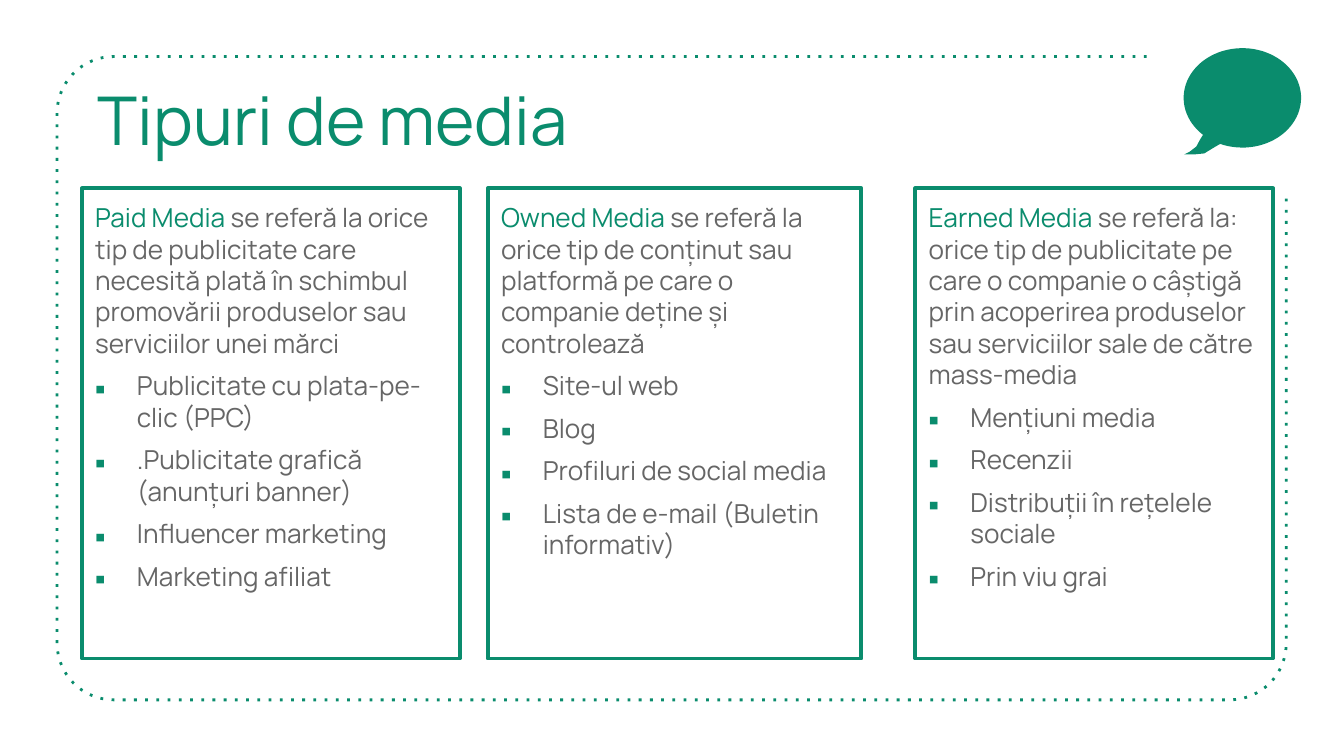
import math
from lxml import etree
from pptx import Presentation
from pptx import util as u
from pptx.dml.color import RGBColor
from pptx.enum import shapes, text
from pptx.oxml import ns

TITLE = "Tipuri de media"
CARDS = [
    {
        "left": 1.55, "width": 7.14, "term": "Paid Media ",
        "meaning": "se referă la orice tip de publicitate care necesită plată "
                   "în schimbul promovării produselor sau serviciilor unei mărci",
        "examples": ["Publicitate cu plata-pe-clic (PPC)",
                     ".Publicitate grafică (anunțuri banner)",
                     "Influencer marketing", "Marketing afiliat"],
    },
    {
        "left": 9.22, "width": 7.06, "term": "Owned Media ",
        "meaning": "se referă la orice tip de conținut sau platformă "
                   "pe care o companie deține și controlează",
        "examples": ["Site-ul web", "Blog", "Profiluri de social media",
                     "Lista de e-mail (Buletin informativ)"],
    },
    {
        "left": 17.3, "width": 6.76, "term": "Earned Media ",
        "meaning": "se referă la: orice tip de publicitate pe care o companie o câștigă "
                   "prin acoperirea produselor sau serviciilor sale de către mass-media",
        "examples": ["Mențiuni media", "Recenzii",
                     "Distribuții în rețelele sociale", "Prin viu grai"],
    },
]
THEME = {
    "font": "Manrope",
    "green": RGBColor.from_string("0A8C6D"),
    "grey": RGBColor.from_string("666666"),
    "white": RGBColor.from_string("FFFFFF"),
    "title": u.Pt(36),
    "body": u.Pt(14),
}
CARD_TOP, CARD_HEIGHT = 3.56, 8.89
FRAME = {"left": 1.08, "top": 1.07, "right": 24.31, "bottom": 13.23, "radius": 1.07}
FRAME_START, FRAME_END = (21.67, 1.07), (24.31, 3.71)
BUBBLE = {"cx": 23.48, "cy": 1.85, "rx": 1.11, "ry": 0.94}
BUBBLE_TAIL = [(23.06, 2.72), (22.94, 2.79), (22.76, 2.9), (22.56, 2.92),
               (22.38, 2.92), (22.48, 2.87), (22.61, 2.77), (22.68, 2.64)]
INDENT = u.Cm(0.79)
FRAME_FORMAT = {
    "word_wrap": True,
    "auto_size": text.MSO_AUTO_SIZE.NONE,
    "vertical_anchor": text.MSO_ANCHOR.TOP,
    "margin_left": u.Cm(0.25), "margin_right": u.Cm(0.25),
    "margin_top": u.Cm(0.25), "margin_bottom": u.Cm(0.25),
}


def arc(cx, cy, rx, ry, start, end, steps):
    angles = [math.radians(start + (end - start) * i / steps) for i in range(steps + 1)]
    return [(cx + rx * math.cos(a), cy + ry * math.sin(a)) for a in angles]


def draw_outline(slide, points, close):
    scaled = [(u.Cm(x), u.Cm(y)) for x, y in points]
    builder = slide.shapes.build_freeform(*scaled[0], scale=1.0)
    builder.add_line_segments(scaled[1:], close=close)
    outline = builder.convert_to_shape()
    outline.shadow.inherit = False
    return outline


def set_line(shape, points):
    shape.line.color.rgb = THEME["green"]
    shape.line.width = u.Pt(points)


def set_fill(shape, color):
    shape.fill.solid()
    shape.fill.fore_color.rgb = THEME[color]


def prepare_text(shape):
    for name, value in FRAME_FORMAT.items():
        setattr(shape.text_frame, name, value)
    return shape.text_frame


def add_run(paragraph, words, color, size="body"):
    run = paragraph.add_run()
    run.text = words
    for name, value in {"name": THEME["font"], "size": THEME[size]}.items():
        setattr(run.font, name, value)
    run.font.color.rgb = THEME[color]


def add_bullet(paragraph):
    props = paragraph._p.get_or_add_pPr()
    props.set("marL", str(INDENT))
    props.set("indent", str(-INDENT))
    color = etree.SubElement(props, ns.qn("a:buClr"))
    etree.SubElement(color, ns.qn("a:srgbClr"), val=str(THEME["green"]))
    etree.SubElement(props, ns.qn("a:buFont"), typeface="Noto Sans Symbols")
    etree.SubElement(props, ns.qn("a:buChar"), char="▪")


def draw_frame(slide):
    left, top, right, bottom, r = FRAME.values()
    corners = [(left + r, top + r, 270, 180), (left + r, bottom - r, 180, 90),
               (right - r, bottom - r, 90, 0)]
    points = [FRAME_START]
    for cx, cy, start, end in corners:
        points += arc(cx, cy, r, r, start, end, 16)
    frame = draw_outline(slide, points + [FRAME_END], False)
    frame.fill.background()
    set_line(frame, 1.5)
    etree.SubElement(frame.line._get_or_add_ln(), ns.qn("a:prstDash"), val="dot")


def draw_bubble(slide):
    body = arc(*BUBBLE.values(), 132, 472, 80)
    bubble = draw_outline(slide, body + BUBBLE_TAIL, True)
    set_fill(bubble, "green")
    bubble.line.fill.background()


def draw_title(slide):
    title = slide.shapes.add_textbox(u.Cm(1.6), u.Cm(1.24), u.Cm(19.08), u.Cm(1.6))
    add_run(prepare_text(title).paragraphs[0], TITLE, "green", "title")


def draw_card(slide, content):
    card = slide.shapes.add_shape(
        shapes.MSO_SHAPE.RECTANGLE, u.Cm(content["left"]), u.Cm(CARD_TOP),
        u.Cm(content["width"]), u.Cm(CARD_HEIGHT))
    card.shadow.inherit = False
    set_fill(card, "white")
    set_line(card, 2)
    body = prepare_text(card)
    definition = body.paragraphs[0]
    add_run(definition, content["term"], "green")
    add_run(definition, content["meaning"], "grey")
    for example in content["examples"]:
        item = body.add_paragraph()
        add_run(item, example, "grey")
    for paragraph in body.paragraphs:
        paragraph.alignment = text.PP_ALIGN.LEFT
        paragraph.space_before = u.Pt(6)
    for item in body.paragraphs[1:]:
        add_bullet(item)


def main():
    deck = Presentation()
    deck.slide_width, deck.slide_height = u.Cm(25.4), u.Cm(14.29)
    slide = deck.slides.add_slide(deck.slide_layouts[6])
    draw_frame(slide)
    draw_title(slide)
    draw_bubble(slide)
    for content in CARDS:
        draw_card(slide, content)
    deck.save("out.pptx")


if __name__ == "__main__":
    main()
